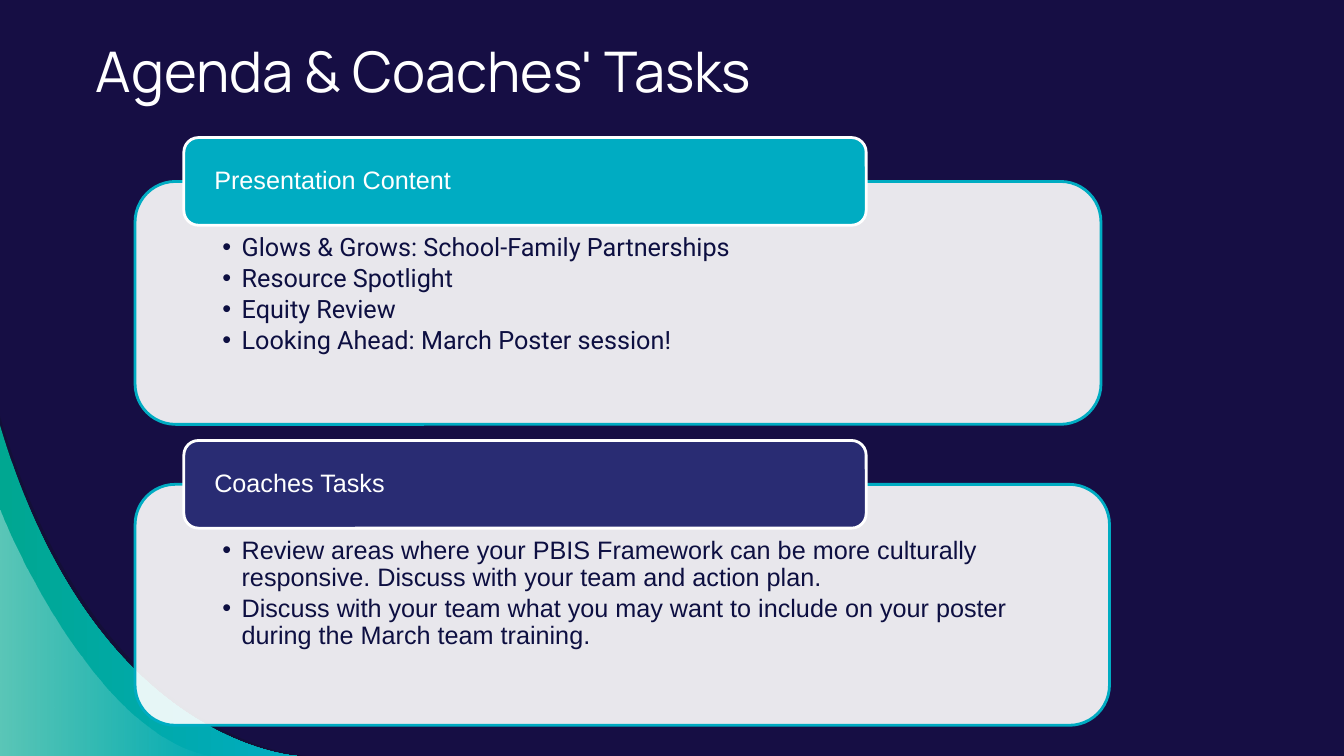
import pptx
import pptx.util
import pptx.dml.color
import pptx.enum.shapes
import pptx.enum.text
import pptx.oxml
import pptx.oxml.ns
from lxml import etree

COLORS = {
    "night": "160E44", "shade": "12102F", "teal": "00ACC2", "green": "00A791",
    "indigo": "292C73", "white": "FFFFFF", "ink": "0D0F41",
}
SLIDE_WIDTH = pptx.util.Inches(13.33)
SLIDE_HEIGHT = pptx.util.Inches(7.5)
BULLET_INDENT = pptx.util.Inches(0.19)
OUTER_CURVE = [(0.32, 0.97), (1, 1), (1, 1)]
INNER_CURVE = [(0, 0), (0.42, 0.94), (1, 1)]


def wide(percent):
    return round(SLIDE_WIDTH * percent / 100)


def tall(percent):
    return round(SLIDE_HEIGHT * percent / 100)


def rgb(name):
    return pptx.dml.color.RGBColor.from_string(COLORS[name])


def set_alpha(color_parent, percent):
    color = color_parent.find(".//" + pptx.oxml.ns.qn("a:srgbClr"))
    alpha = etree.SubElement(color, pptx.oxml.ns.qn("a:alpha"))
    alpha.set("val", str(percent * 1000))


def fill_solid(shape, color, opacity=100):
    shape.shadow.inherit = False
    shape.fill.solid()
    shape.fill.fore_color.rgb = rgb(color)
    if opacity < 100:
        set_alpha(shape.fill._xPr.find(pptx.oxml.ns.qn("a:solidFill")), opacity)


def fill_gradient(shape, colors, opacities=(100, 100)):
    shape.shadow.inherit = False
    shape.fill.gradient()
    shape.fill.gradient_angle = 0
    for stop, color, opacity in zip(shape.fill.gradient_stops, colors, opacities):
        stop.color.rgb = rgb(color)
        if opacity < 100:
            set_alpha(stop._gs, opacity)


def set_insets(frame, left, top, right, bottom):
    frame.word_wrap = True
    frame.margin_left, frame.margin_top = pptx.util.Inches(left), pptx.util.Inches(top)
    frame.margin_right, frame.margin_bottom = pptx.util.Inches(right), pptx.util.Inches(bottom)


def write(paragraph, text, font, size, color):
    paragraph.text = text
    paragraph.alignment = pptx.enum.text.PP_ALIGN.LEFT
    paragraph.font.name = font
    paragraph.font.size = pptx.util.Pt(size)
    paragraph.font.color.rgb = rgb(color)


def add_bullet(paragraph):
    properties = paragraph._p.get_or_add_pPr()
    properties.set("marL", str(BULLET_INDENT))
    properties.set("indent", str(-BULLET_INDENT))
    bullet_font = etree.SubElement(properties, pptx.oxml.ns.qn("a:buFont"))
    bullet_font.set("typeface", "Arial")
    bullet = etree.SubElement(properties, pptx.oxml.ns.qn("a:buChar"))
    bullet.set("char", "•")


def bend_first_edge(shape):
    lines = list(shape._element.iter(pptx.oxml.ns.qn("a:lnTo")))[:3]
    curve = etree.Element(pptx.oxml.ns.qn("a:cubicBezTo"))
    lines[0].addprevious(curve)
    for line in lines:
        curve.append(line[0])
        line.getparent().remove(line)


def add_swoosh(slide, width, height, curve):
    top = SLIDE_HEIGHT - height
    builder = slide.shapes.build_freeform(0, top)
    builder.add_line_segments(
        [(round(x * width), round(top + y * height)) for x, y in curve + [(0, 1)]], close=True)
    swoosh = builder.convert_to_shape()
    bend_first_edge(swoosh)
    swoosh.line.fill.background()
    return swoosh


def add_corner(slide):
    shade = add_swoosh(slide, wide(22.73), tall(44.93), OUTER_CURVE)
    fill_solid(shade, "shade", 54)
    band = add_swoosh(slide, wide(22.13), tall(43.73), OUTER_CURVE)
    fill_gradient(band, ("green", "teal"))
    glow = add_swoosh(slide, wide(16.2), tall(32.53), INNER_CURVE)
    fill_gradient(glow, ("white", "white"), (36, 0))


def add_title(slide, left, top, width, height, text):
    frame = slide.shapes.add_textbox(left, top, width, height).text_frame
    set_insets(frame, 0.1, 0.1, 0.1, 0.1)
    write(frame.paragraphs[0], text, "Manrope", 40, "white")


def add_panel(slide, left, top, width, height, fill, opacity, outline):
    panel = slide.shapes.add_shape(
        pptx.enum.shapes.MSO_SHAPE.ROUNDED_RECTANGLE, left, top, width, height)
    fill_solid(panel, fill, opacity)
    panel.line.color.rgb = rgb(outline)
    panel.line.width = pptx.util.Pt(2)
    return panel.text_frame


def add_section(slide, left, top, width, height, heading, tab_color, items, item_font):
    body = add_panel(slide, left, top, width, height, "white", 90, "teal")
    set_insets(body, 0.75, 0.41, 0.75, 0.14)
    body.vertical_anchor = pptx.enum.text.MSO_ANCHOR.TOP
    for index, item in enumerate(items):
        paragraph = body.add_paragraph() if index else body.paragraphs[0]
        add_bullet(paragraph)
        write(paragraph, item, item_font, 18, "ink")
        paragraph.line_spacing = 0.9
        paragraph.space_after = pptx.util.Pt(2.7)

    tab = add_panel(slide, left + wide(3.63), top - tall(5.8), wide(50.77), tall(11.6),
                    tab_color, 100, "white")
    set_insets(tab, 0.26, 0, 0.26, 0)
    tab.vertical_anchor = pptx.enum.text.MSO_ANCHOR.MIDDLE
    write(tab.paragraphs[0], heading, "Arial", 18, "white")
    tab.paragraphs[0].line_spacing = 0.9


def main():
    deck = pptx.Presentation()
    deck.slide_width, deck.slide_height = SLIDE_WIDTH, SLIDE_HEIGHT
    slide = deck.slides.add_slide(deck.slide_layouts[6])
    slide.background.fill.solid()
    slide.background.fill.fore_color.rgb = rgb("night")

    add_corner(slide)
    add_title(slide, wide(6.38), tall(3.47), wide(77), tall(12.27), "Agenda & Coaches' Tasks")
    add_section(
        slide, wide(10.05), tall(24), wide(71.87), tall(32.13),
        "Presentation Content", "teal",
        ["Glows & Grows: School-Family Partnerships", "Resource Spotlight",
         "Equity Review", "Looking Ahead: March Poster session!"], "Roboto")
    add_section(
        slide, wide(10.05), tall(64.07), wide(72.5), tall(31.87),
        "Coaches Tasks", "indigo",
        ["Review areas where your PBIS Framework can be more culturally responsive. "
         "Discuss with your team and action plan.",
         "Discuss with your team what you may want to include on your poster "
         "during the March team training."], "Arial")
    deck.save("out.pptx")


if __name__ == "__main__":
    main()
